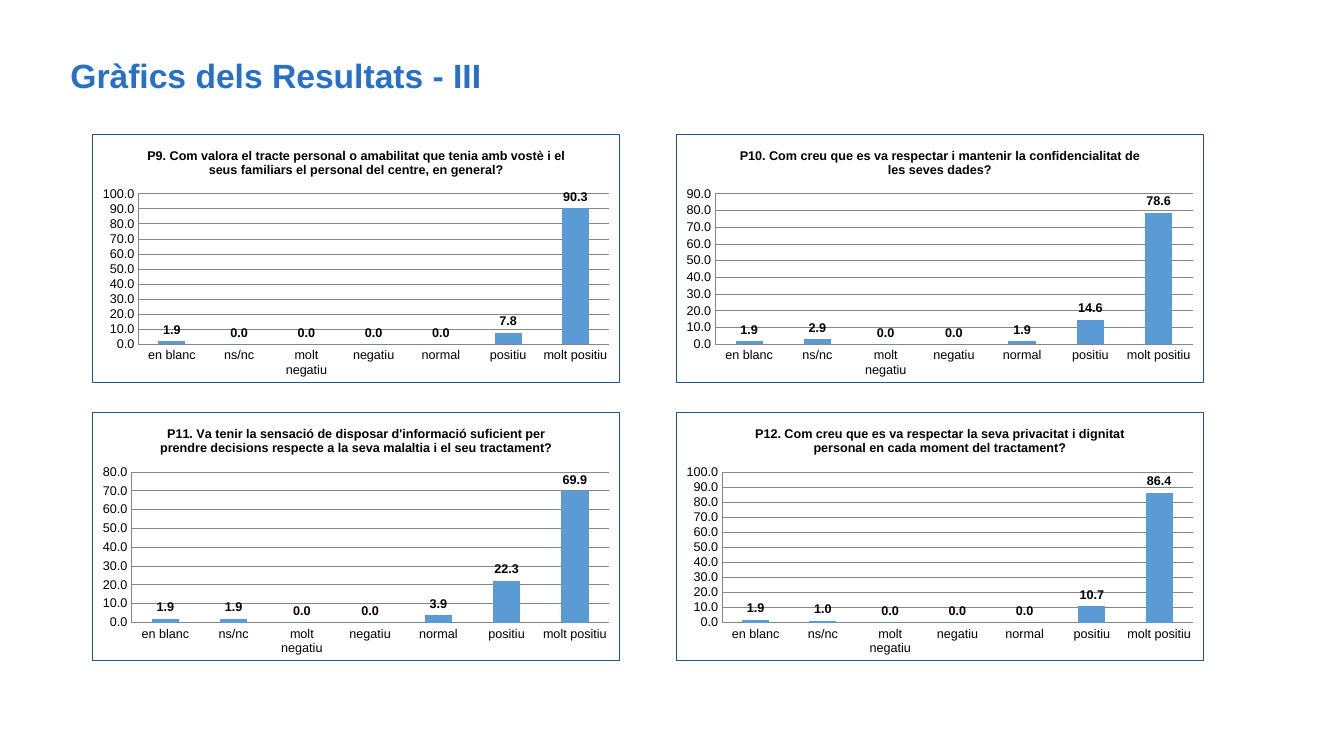
from lxml import etree
from pptx import Presentation
from pptx.chart.data import CategoryChartData
from pptx.dml.color import RGBColor
from pptx.enum import chart as ch, text
from pptx.oxml import parse_xml
from pptx.util import Inches, Pt

TITLE_BLUE = RGBColor(0x26, 0x70, 0xCA)
BAR_BLUE = RGBColor(0x5B, 0x9B, 0xD5)
BORDER_BLUE = RGBColor(0x1D, 0x54, 0x97)
GRID_GREY = RGBColor(0x86, 0x86, 0x86)
BLACK = RGBColor(0, 0, 0)
FONT = "Arial"

CATEGORIES = ["en blanc", "ns/nc", "molt negatiu", "negatiu", "normal",
              "positiu", "molt positiu"]
QUESTIONS = [
    ("P9. Com valora el tracte personal o amabilitat que tenia amb vostè i "
     "el seus familiars el personal del centre, en general?",
     [1.9, 0, 0, 0, 0, 7.8, 90.3]),
    ("P10. Com creu que es va respectar i mantenir la confidencialitat de "
     "les seves dades?",
     [1.9, 2.9, 0, 0, 1.9, 14.6, 78.6]),
    ("P11. Va tenir la sensació de disposar d'informació suficient per "
     "prendre decisions respecte a la seva malaltia i el seu tractament?",
     [1.9, 1.9, 0, 0, 3.9, 22.3, 69.9]),
    ("P12. Com creu que es va respectar la seva privacitat i dignitat "
     "personal en cada moment del tractament?",
     [1.9, 1, 0, 0, 0, 10.7, 86.4]),
]


def format_font(font, size=9, bold=False, color=BLACK):
    font.name, font.size, font.bold = FONT, Pt(size), bold
    font.color.rgb = color


def write_text(tf, words, **style):
    p = tf.paragraphs[0]
    r = p.add_run()
    r.text = words
    format_font(r.font, **style)
    return p


def add_title(slide, left, top, width, height):
    tf = slide.shapes.add_textbox(Inches(left), Inches(top), Inches(width),
                                  Inches(height)).text_frame
    tf.word_wrap = True
    tf.vertical_anchor = text.MSO_ANCHOR.MIDDLE
    p = write_text(tf, "Gràfics dels Resultats - III", size=24, bold=True,
                   color=TITLE_BLUE)
    p.line_spacing = 0.9


def add_border(chart):
    """Give the chart area a white fill and a thin blue frame."""
    border = parse_xml(
        '<c:spPr xmlns:c="http://schemas.openxmlformats.org/drawingml/2006/chart"'
        ' xmlns:a="http://schemas.openxmlformats.org/drawingml/2006/main">'
        '<a:solidFill><a:srgbClr val="FFFFFF"/></a:solidFill>'
        f'<a:ln w="{Pt(0.75)}"><a:solidFill><a:srgbClr val="{BORDER_BLUE}"/>'
        '</a:solidFill></a:ln></c:spPr>')
    chart.element.chart.addnext(border)


def add_question_chart(slide, question, values, left, top, width, height):
    data = CategoryChartData(number_format="0.0")
    data.categories = CATEGORIES
    data.add_series("Series 1", values)
    chart = slide.shapes.add_chart(
        ch.XL_CHART_TYPE.COLUMN_CLUSTERED, Inches(left), Inches(top),
        Inches(width), Inches(height), data).chart
    format_font(chart.font)
    chart.has_legend = False
    write_text(chart.chart_title.text_frame, question, bold=True)
    chart.chart_title.include_in_layout = False
    add_border(chart)

    # Axes
    for axis in (chart.category_axis, chart.value_axis):
        axis.major_tick_mark = axis.minor_tick_mark = ch.XL_TICK_MARK.NONE
        axis.format.line.color.rgb = GRID_GREY
        format_font(axis.tick_labels.font)
    grid = chart.value_axis.major_gridlines.format.line
    grid.color.rgb, grid.width = GRID_GREY, Pt(0.75)
    chart.value_axis.tick_labels.number_format = "0.0"
    chart.value_axis.tick_labels.number_format_is_linked = False

    # Columns and their values
    plot = chart.plots[0]
    plot.gap_width = 150
    plot.vary_by_categories = False
    fill = plot.series[0].format.fill
    fill.solid()
    fill.fore_color.rgb = BAR_BLUE
    plot.has_data_labels = True
    labels = plot.data_labels
    labels.show_value = True
    labels.number_format, labels.number_format_is_linked = "0.0", False
    labels.position = ch.XL_LABEL_POSITION.OUTSIDE_END
    format_font(labels.font, bold=True)


def add_chart_grid(slide, left, top, width, height, gap_x=0.55, gap_y=0.29):
    w, h = (width - gap_x) / 2, (height - gap_y) / 2
    for i, (question, values) in enumerate(QUESTIONS):
        row, col = divmod(i, 2)
        add_question_chart(slide, question, values, left + col * (w + gap_x),
                           top + row * (h + gap_y), w, h)


def main():
    prs = Presentation()
    prs.slide_width, prs.slide_height = Inches(13.33), Inches(7.5)
    slide = prs.slides.add_slide(prs.slide_layouts[6])
    add_title(slide, 0.6, 0.54, 12.19, 0.46)
    add_chart_grid(slide, 0.91, 1.33, 11.03, 5.23)
    prs.save("out.pptx")


if __name__ == "__main__":
    main()
